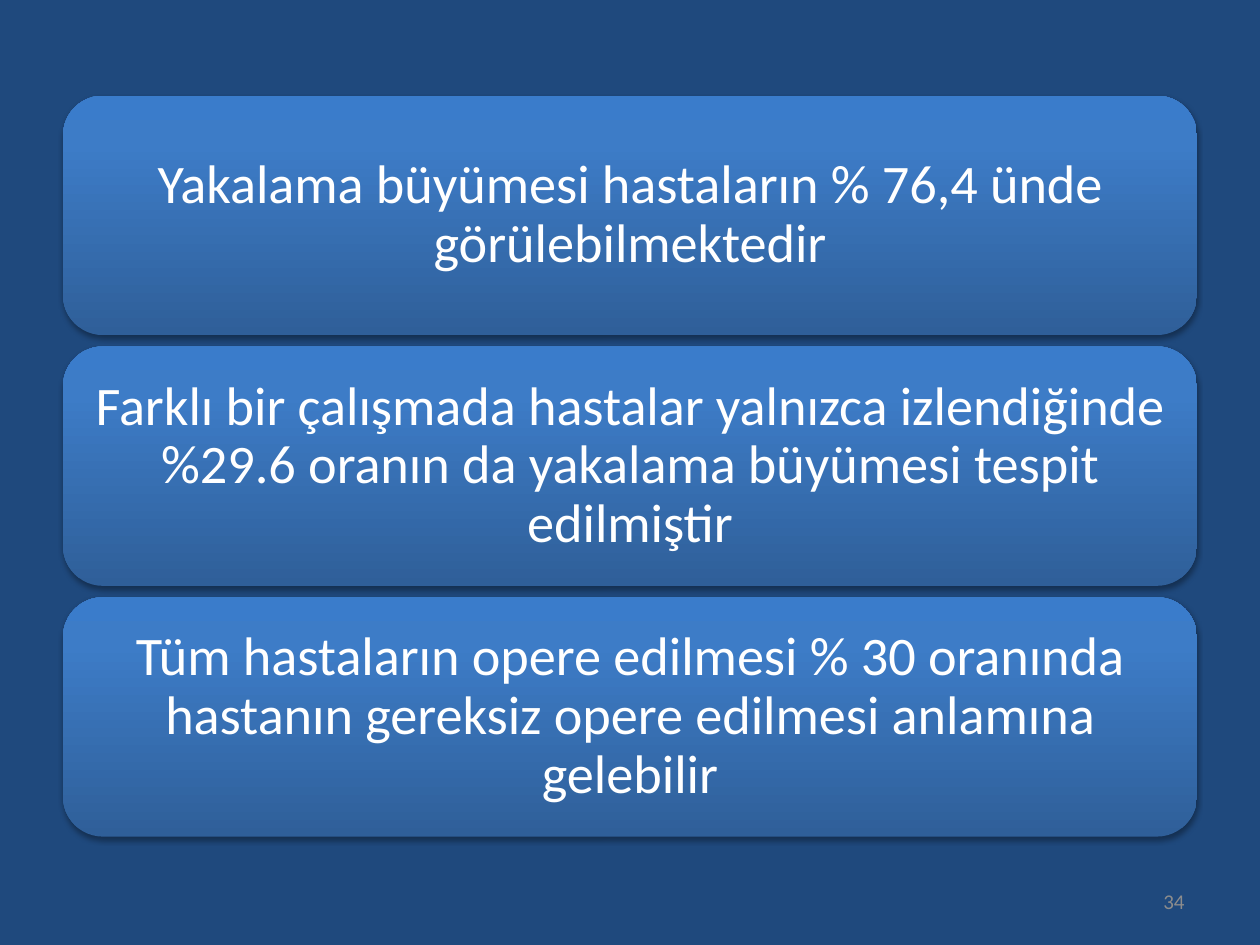
"""Build a slide of three stacked statement cards with a page number."""
from copy import deepcopy
from dataclasses import dataclass

from lxml import etree
from pptx import Presentation
from pptx.dml.color import RGBColor
from pptx.enum.shapes import MSO_SHAPE
from pptx.enum.text import MSO_ANCHOR, PP_ALIGN
from pptx.oxml.ns import qn
from pptx.util import Inches, Pt

ROUND = MSO_SHAPE.ROUNDED_RECTANGLE
MIDDLE = MSO_ANCHOR.MIDDLE
CENTER = PP_ALIGN.CENTER
RIGHT = PP_ALIGN.RIGHT


@dataclass(frozen=True)
class Theme:
    font: str = "Calibri"
    back: str = "1F497D"
    text: str = "FFFFFF"
    muted: str = "8C8C8C"
    shade: str = "000000"
    stops: tuple = ((0, "2F5F99"), (0.8, "3D7CC7"), (1, "3A7CCB"))
    body: float = 31
    small: float = 12


@dataclass(frozen=True)
class Card:
    top: float
    text: str


THEME = Theme()
LEFT, TOP, WIDTH, HEIGHT, STEP = 0.5, 0.76, 9, 1.9, 1.99
LINES = (
    "Yakalama büyümesi hastaların % 76,4 ünde görülebilmektedir",
    "Farklı bir çalışmada hastalar yalnızca izlendiğinde %29.6 oranın da "
    "yakalama büyümesi tespit edilmiştir",
    "Tüm hastaların opere edilmesi % 30 oranında hastanın gereksiz opere "
    "edilmesi anlamına gelebilir",
)
CARDS = [Card(TOP + i * STEP, line) for i, line in enumerate(LINES)]


def write(shape, text: str, size: float, color: str, align, pad: float) -> None:
    """Set one styled paragraph, centred vertically in the shape."""
    frame = shape.text_frame
    frame.word_wrap = True
    frame.vertical_anchor = MIDDLE
    frame.margin_left = frame.margin_right = Inches(pad)
    para = frame.paragraphs[0]
    para.alignment = align
    run = para.add_run()
    run.text = text
    run.font.name = THEME.font
    run.font.size = Pt(size)
    run.font.color.rgb = RGBColor.from_string(color)


def blend(shape) -> None:
    """Fill the shape with the theme's vertical gradient."""
    fill = shape.fill
    fill.gradient()
    fill.gradient_angle = 90
    first = next(shape._element.spPr.iter(qn("a:gs")))
    first.addnext(deepcopy(first))
    for stop, (place, color) in zip(fill.gradient_stops, THEME.stops):
        stop.position = place
        stop.color.rgb = RGBColor.from_string(color)


def shadow(shape) -> None:
    """Give the shape a soft shadow below it."""
    shape.shadow.inherit = False
    effects = shape._element.spPr.find(qn("a:effectLst"))
    outer = etree.SubElement(
        effects, qn("a:outerShdw"), blurRad=str(Pt(3.1)), dist=str(Pt(1.8)),
        dir="5400000", rotWithShape="0")
    color = etree.SubElement(outer, qn("a:srgbClr"), val=THEME.shade)
    etree.SubElement(color, qn("a:alpha"), val="35000")


def draw(slide, card: Card) -> None:
    """Draw one statement card."""
    shape = slide.shapes.add_shape(
        ROUND, Inches(LEFT), Inches(card.top), Inches(WIDTH), Inches(HEIGHT))
    blend(shape)
    shape.line.fill.background()
    shadow(shape)
    write(shape, card.text, THEME.body, THEME.text, CENTER, 0.04)
    shape.text_frame.paragraphs[0].line_spacing = 0.9


def main() -> None:
    """Build and save the slide."""
    deck = Presentation()
    deck.slide_width, deck.slide_height = Inches(10), Inches(7.5)
    slide = deck.slides.add_slide(deck.slide_layouts[6])
    back = slide.background.fill
    back.solid()
    back.fore_color.rgb = RGBColor.from_string(THEME.back)
    for card in CARDS:
        draw(slide, card)
    page = slide.shapes.add_textbox(
        Inches(7.17), Inches(6.95), Inches(2.33), Inches(0.4))
    write(page, "34", THEME.small, THEME.muted, RIGHT, 0.1)
    deck.save("out.pptx")


if __name__ == "__main__":
    main()
